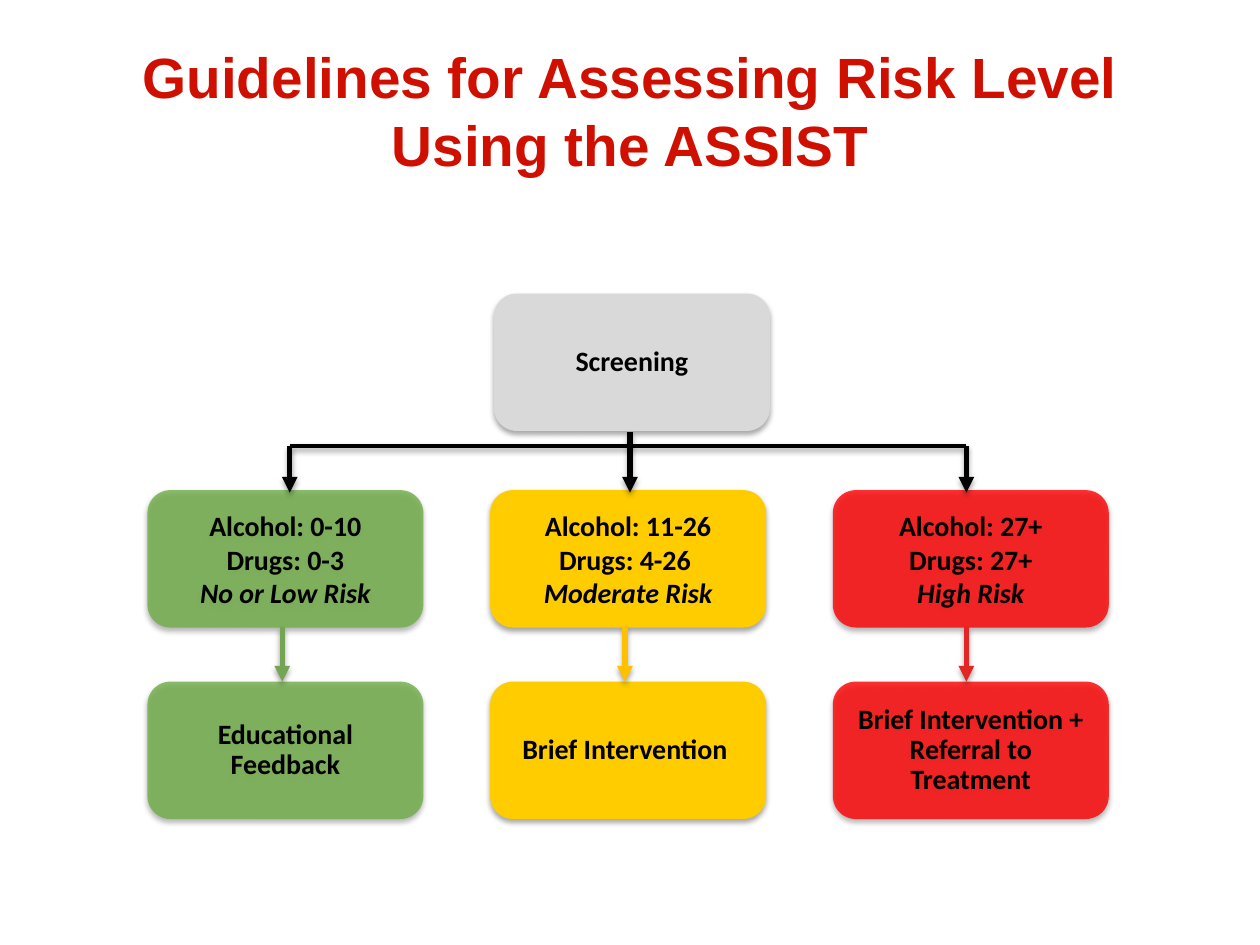
from lxml import etree
from pptx import Presentation
from pptx.dml.color import RGBColor
from pptx.enum.shapes import MSO_CONNECTOR, MSO_SHAPE
from pptx.enum.text import MSO_ANCHOR, PP_ALIGN
from pptx.oxml import parse_xml
from pptx.oxml.ns import qn
from pptx.util import Inches, Pt

NAMESPACE = "http://schemas.openxmlformats.org/drawingml/2006/main"
SHADOW = (
    f'<a:effectLst xmlns:a="{NAMESPACE}">'
    '<a:outerShdw blurRad="39370" dist="22860" dir="5400000" rotWithShape="0">'
    '<a:srgbClr val="000000"><a:alpha val="35000"/></a:srgbClr>'
    "</a:outerShdw></a:effectLst>"
)


def color(value):
    return RGBColor.from_string(value)


def write(shape, lines, font="Calibri", size=16, ink="000000", spacing=None,
          italic_last=False, margin=0.06):
    frame = shape.text_frame
    frame.word_wrap = True
    frame.vertical_anchor = MSO_ANCHOR.MIDDLE
    frame.margin_left = frame.margin_right = Inches(margin)
    frame.margin_top = frame.margin_bottom = Inches(0.06)
    for index, line in enumerate(lines):
        para = frame.paragraphs[0] if index == 0 else frame.add_paragraph()
        para.alignment = PP_ALIGN.CENTER
        if spacing:
            para.line_spacing = spacing
        span = para.add_run()
        span.text = line
        span.font.name = font
        span.font.size = Pt(size)
        span.font.bold = True
        span.font.italic = italic_last and index == len(lines) - 1
        span.font.color.rgb = color(ink)


deck = Presentation()
deck.slide_width, deck.slide_height = Inches(10), Inches(7.5)
page = deck.slides.add_slide(deck.slide_layouts[6])

# Title
title = page.shapes.add_textbox(Inches(0.5), Inches(0.25), Inches(9), Inches(1.25))
write(title, ["Guidelines for Assessing Risk Level Using the ASSIST"],
      font="Arial", size=32.4, ink="CF1001", margin=0.1)

# Boxes: screening on top, then one column per risk level
BOX_WIDTH, BOX_HEIGHT = 2.19, 1.09
FIRST_LEFT, COLUMN_STEP = 1.17, 2.72
SCORE_TOP, ACTION_TOP = 3.89, 5.41
levels = [
    ("70AD47", 80, ["Alcohol: 0-10", "Drugs: 0-3", "No or Low Risk"],
     "Educational Feedback"),
    ("FFCC00", 100, ["Alcohol: 11-26", "Drugs: 4-26 ", "Moderate Risk"],
     "Brief Intervention "),
    ("FF0000", 80, ["Alcohol: 27+", "Drugs: 27+", "High Risk"],
     "Brief Intervention + Referral to Treatment"),
]
boxes = [(3.92, 2.33, "D9D9D9", 100, ["Screening"])]
for column, (fill, opacity, scores, action) in enumerate(levels):
    left = FIRST_LEFT + column * COLUMN_STEP
    boxes.append((left, SCORE_TOP, fill, opacity, scores))
    boxes.append((left, ACTION_TOP, fill, opacity, [action]))

for left, top, fill, opacity, lines in boxes:
    box = page.shapes.add_shape(MSO_SHAPE.ROUNDED_RECTANGLE, Inches(left), Inches(top),
                                Inches(BOX_WIDTH), Inches(BOX_HEIGHT))
    box.fill.solid()
    box.fill.fore_color.rgb = color(fill)
    if opacity < 100:
        tint = box.fill._xPr.find(qn("a:solidFill"))[0]
        etree.SubElement(tint, qn("a:alpha")).set("val", str(opacity * 1000))
    box.line.fill.background()
    box._element.spPr.append(parse_xml(SHADOW))
    is_score = len(lines) > 1
    write(box, lines, spacing=None if is_score else 0.9, italic_last=is_score)

# Connectors: start x, start y, end x, end y, colour, width, arrowhead
BAR_Y, SCORE_TIP, SCORE_BOTTOM = 3.54, 3.91, 4.98
lines = [
    (2.24, SCORE_BOTTOM, 2.24, ACTION_TOP, "75A554", 3, True),
    (4.96, SCORE_BOTTOM, 4.96, ACTION_TOP, "FFC000", 3, True),
    (7.67, SCORE_BOTTOM, 7.67, ACTION_TOP, "E32623", 3, True),
    (2.3, BAR_Y, 2.3, SCORE_TIP, "000000", 3, True),
    (5, 3.43, 5, SCORE_TIP, "000000", 3, True),
    (7.67, BAR_Y, 7.67, SCORE_TIP, "000000", 3, True),
    (2.3, BAR_Y, 7.67, BAR_Y, "000000", 2.25, False),
]
for start_x, start_y, end_x, end_y, ink, width, has_arrow in lines:
    connector = page.shapes.add_connector(MSO_CONNECTOR.STRAIGHT, Inches(start_x),
                                          Inches(start_y), Inches(end_x), Inches(end_y))
    connector.line.color.rgb = color(ink)
    connector.line.width = Pt(width)
    if has_arrow:
        outline = connector.line._get_or_add_ln()
        etree.SubElement(outline, qn("a:tailEnd")).set("type", "triangle")
    connector._element.spPr.append(parse_xml(SHADOW))

deck.save("out.pptx")
